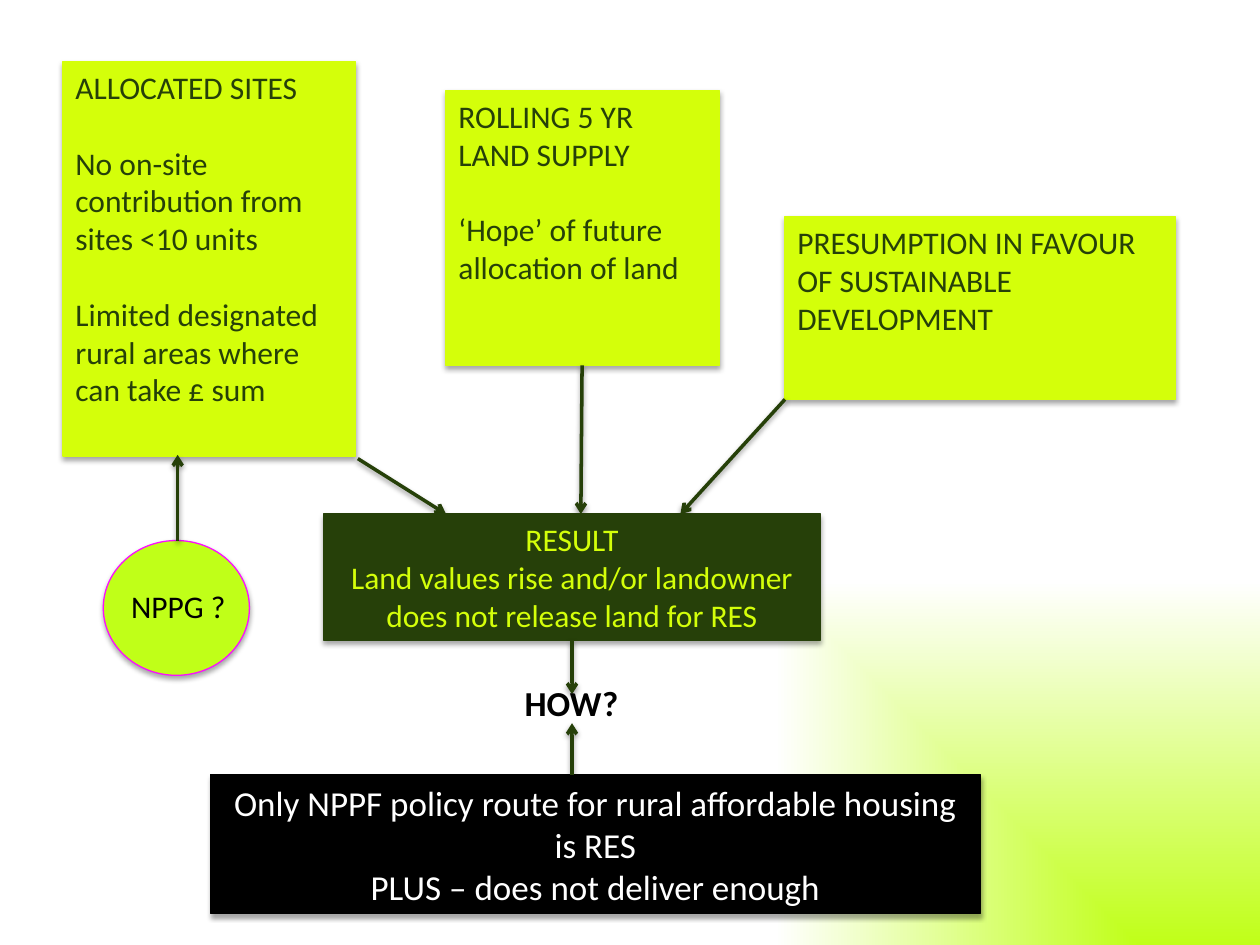
"""Build a slide showing how planning policy affects rural exception sites."""
from dataclasses import dataclass

import pptx
import pptx.dml.color
import pptx.enum.dml
import pptx.enum.shapes
import pptx.enum.text
import pptx.oxml
import pptx.oxml.ns
import pptx.util

Inches = pptx.util.Inches
Pt = pptx.util.Pt
RGBColor = pptx.dml.color.RGBColor
Align = pptx.enum.text.PP_ALIGN
Anchor = pptx.enum.text.MSO_ANCHOR
Preset = pptx.enum.shapes.MSO_SHAPE

LIME = RGBColor(0xD4, 0xFF, 0x0A)
LEAF = RGBColor(0xC0, 0xFF, 0x18)
FOREST = RGBColor(0x26, 0x40, 0x09)
MAGENTA = RGBColor(0xFD, 0x0E, 0xFF)
BLACK = RGBColor(0, 0, 0)
WHITE = RGBColor(0xFF, 0xFF, 0xFF)
FONT = "Calibri"
BLANK_LAYOUT = 6


@dataclass(frozen=True)
class Box:
    """A filled shape with its text and format."""

    left: float
    top: float
    width: float
    height: float
    paragraphs: tuple[str, ...] = ()
    fill: RGBColor = LIME
    outline: RGBColor = LIME
    text_color: RGBColor = FOREST
    size: float = 18
    align: Align = Align.LEFT
    anchor: Anchor = Anchor.TOP
    gap: float = 0
    preset: Preset = Preset.RECTANGLE


@dataclass(frozen=True)
class Label:
    """A plain centred text box."""

    left: float
    top: float
    width: float
    height: float
    text: str
    size: float
    bold: bool = False


@dataclass(frozen=True)
class Arrow:
    """A straight arrow between two points."""

    start: tuple[float, float]
    end: tuple[float, float]


POLICY_BOXES = (
    Box(0.5, 0.49, 2.32, 3.13, (
        "ALLOCATED SITES",
        "No on-site contribution from sites <10 units",
        "Limited designated rural areas where can take £ sum",
    ), gap=21.6),
    Box(3.54, 0.72, 2.17, 2.18, (
        "ROLLING 5 YR LAND SUPPLY",
        "‘Hope’ of future allocation of land",
    ), gap=21.6),
    Box(6.23, 1.72, 3.1, 1.45,
        ("PRESUMPTION IN FAVOUR OF SUSTAINABLE DEVELOPMENT",)),
)
POLICY_ARROWS = (
    Arrow((2.84, 3.64), (3.54, 4.08)),
    Arrow((4.62, 2.9), (4.61, 4.08)),
    Arrow((6.23, 3.17), (5.4, 4.08)),
)
OUTCOME_BOXES = (
    Box(2.57, 4.08, 3.94, 1, (
        "RESULT",
        "Land values rise and/or landowner does not release land for RES",
    ), FOREST, FOREST, LIME, align=Align.CENTER, anchor=Anchor.MIDDLE),
    Box(1.67, 6.15, 6.11, 1.1, (
        "Only NPPF policy route for rural affordable housing is RES",
        "PLUS – does not deliver enough",
    ), BLACK, BLACK, WHITE, 20, Align.CENTER, Anchor.MIDDLE),
)
HOW_ARROWS = (
    Arrow((4.54, 5.08), (4.54, 5.51)),
    Arrow((4.54, 6.15), (4.54, 5.74)),
)
HOW_LABEL = Label(3.54, 5.36, 1.99, 0.44, "HOW?", 20, bold=True)
GUIDANCE_CIRCLE = Box(0.82, 4.29, 1.16, 1.07, fill=LEAF, outline=MAGENTA,
                      preset=Preset.OVAL)
GUIDANCE_LABEL = Label(0.91, 4.61, 1.01, 0.4, "NPPG ?", 18)
GUIDANCE_ARROW = Arrow((1.41, 4.29), (1.41, 3.61))
DIAGRAM = (*POLICY_BOXES, *POLICY_ARROWS, *OUTCOME_BOXES, *HOW_ARROWS,
           HOW_LABEL, GUIDANCE_CIRCLE, GUIDANCE_LABEL, GUIDANCE_ARROW)


def add_shadow(shape, distance: float, opacity: int) -> None:
    """Add a soft shadow straight below a shape or connector."""
    shape._element.spPr.append(pptx.oxml.parse_xml(
        f'<a:effectLst {pptx.oxml.ns.nsdecls("a")}>'
        f'<a:outerShdw blurRad="{Pt(3.1)}" dist="{Pt(distance)}" '
        'dir="5400000" rotWithShape="0"><a:srgbClr val="000000">'
        f'<a:alpha val="{opacity * 1000}"/></a:srgbClr>'
        '</a:outerShdw></a:effectLst>'))


def write_text(shape, paragraphs: tuple[str, ...], *, size: float,
               color: RGBColor, align: Align, anchor: Anchor = Anchor.TOP,
               gap: float = 0, bold: bool = False) -> None:
    """Fill a shape with evenly formatted paragraphs."""
    frame = shape.text_frame
    frame.word_wrap = True
    frame.vertical_anchor = anchor
    for index, text in enumerate(paragraphs):
        paragraph = frame.add_paragraph() if index else frame.paragraphs[0]
        paragraph.alignment = align
        paragraph.space_before = Pt(gap if index else 0)
        run = paragraph.add_run()
        run.text = text
        run.font.name = FONT
        run.font.size = Pt(size)
        run.font.bold = bold
        run.font.color.rgb = color


def draw_box(slide, box: Box) -> None:
    """Draw a filled shape with its text."""
    shape = slide.shapes.add_shape(
        box.preset, Inches(box.left), Inches(box.top),
        Inches(box.width), Inches(box.height))
    shape.fill.solid()
    shape.fill.fore_color.rgb = box.fill
    shape.line.color.rgb = box.outline
    shape.line.width = Pt(0.75)
    add_shadow(shape, 1.8, 35)
    write_text(shape, box.paragraphs, size=box.size, color=box.text_color,
               align=box.align, anchor=box.anchor, gap=box.gap)


def draw_label(slide, label: Label) -> None:
    """Draw a centred text box."""
    shape = slide.shapes.add_textbox(
        Inches(label.left), Inches(label.top),
        Inches(label.width), Inches(label.height))
    write_text(shape, (label.text,), size=label.size, color=BLACK,
               align=Align.CENTER, bold=label.bold)


def draw_arrow(slide, arrow: Arrow) -> None:
    """Draw a connector with an open arrowhead at its end."""
    connector = slide.shapes.add_connector(
        pptx.enum.shapes.MSO_CONNECTOR.STRAIGHT,
        *map(Inches, arrow.start + arrow.end))
    connector.line.color.rgb = FOREST
    connector.line.width = Pt(2)
    connector.line._get_or_add_ln().append(pptx.oxml.parse_xml(
        f'<a:tailEnd {pptx.oxml.ns.nsdecls("a")} type="arrow"/>'))
    add_shadow(connector, 1.6, 38)


def paint_background(slide) -> None:
    """Fade the background from a green bottom right corner to white."""
    fill = slide.background.fill
    fill.gradient()
    for stop, position, color in zip(fill.gradient_stops, (0, 0.77), (LEAF, WHITE)):
        stop.position = position
        stop.color.rgb = color
    linear = next(slide._element.iter(pptx.oxml.ns.qn("a:lin")))
    linear.getparent().replace(linear, pptx.oxml.parse_xml(
        f'<a:path {pptx.oxml.ns.nsdecls("a")} path="rect">'
        '<a:fillToRect l="100000" t="100000"/></a:path>'))


def main() -> None:
    """Build and save the presentation."""
    presentation = pptx.Presentation()
    presentation.slide_width = Inches(10)
    presentation.slide_height = Inches(7.5)
    slide = presentation.slides.add_slide(presentation.slide_layouts[BLANK_LAYOUT])
    paint_background(slide)
    painters = {Box: draw_box, Label: draw_label, Arrow: draw_arrow}
    for element in DIAGRAM:
        painters[type(element)](slide, element)
    presentation.save("out.pptx")


if __name__ == "__main__":
    main()
